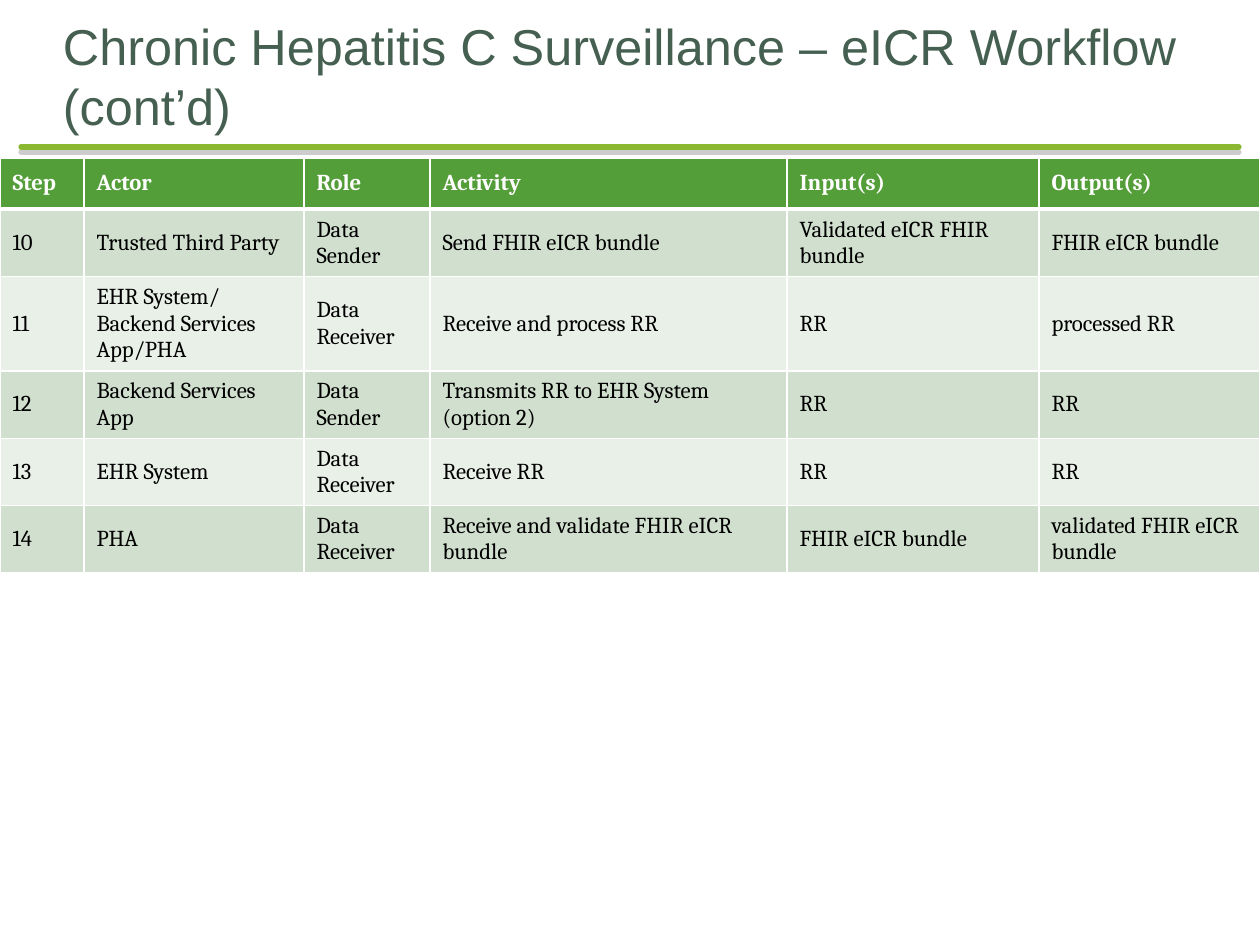
from dataclasses import dataclass

from lxml import etree
from pptx import Presentation
from pptx.dml.color import RGBColor
from pptx.enum.shapes import MSO_CONNECTOR
from pptx.enum.text import MSO_ANCHOR
from pptx.oxml import parse_xml
from pptx.oxml.ns import nsdecls, qn
from pptx.util import Pt

STRAIGHT = MSO_CONNECTOR.STRAIGHT
MIDDLE = MSO_ANCHOR.MIDDLE
BOTTOM = MSO_ANCHOR.BOTTOM


@dataclass(frozen=True)
class Theme:
    title: str = "455F51"
    rule: str = "8AB833"
    shadow: str = "808080"
    header: str = "549E39"
    bands: tuple = ("D1DFCE", "E9F0E8")
    white: str = "FFFFFF"
    ink: str = "000000"
    title_font: str = "Arial"
    table_font: str = "Cambria"
    title_size: float = 28.8
    table_size: float = 13


THEME = Theme()
SCALE = 914400 / 126


def px(length):
    return round(length * SCALE)


def write(frame, text, *, font, size, color, bold=False):
    frame.word_wrap = True
    run = frame.paragraphs[0].add_run()
    run.text = text
    run.font.name = font
    run.font.size = Pt(size)
    run.font.bold = bold
    run.font.color.rgb = RGBColor.from_string(color)


prs = Presentation()
prs.slide_width = px(1260)
prs.slide_height = px(945)
slide = prs.slides.add_slide(prs.slide_layouts[6])

rule = slide.shapes.add_connector(STRAIGHT, px(21), px(147), px(1239), px(147))
rule.line.color.rgb = RGBColor.from_string(THEME.rule)
rule.line.width = Pt(3)
rule.line._get_or_add_ln().set("cap", "rnd")
rule._element.spPr.append(parse_xml(
    f'<a:effectLst {nsdecls("a")}>'
    f'<a:outerShdw dist="{Pt(3)}" dir="5400000" algn="ctr" rotWithShape="0">'
    f'<a:srgbClr val="{THEME.shadow}"><a:alpha val="40000"/></a:srgbClr>'
    '</a:outerShdw></a:effectLst>'
))

heading = slide.shapes.add_textbox(px(63), px(63), px(1134), px(73)).text_frame
heading.margin_left = heading.margin_right = heading.margin_bottom = 0
heading.margin_top = px(6)
heading.vertical_anchor = BOTTOM
write(heading, "Chronic Hepatitis C Surveillance – eICR Workflow (cont’d)",
      font=THEME.title_font, size=THEME.title_size, color=THEME.title)

steps = [
    ("Step", "Actor", "Role", "Activity", "Input(s)", "Output(s)"),
    ("10", "Trusted Third Party", "Data Sender", "Send FHIR eICR bundle",
     "Validated eICR FHIR bundle", "FHIR eICR bundle"),
    ("11", "EHR System/ Backend Services App/PHA", "Data Receiver",
     "Receive and process RR", "RR", "processed RR"),
    ("12", "Backend Services App", "Data Sender",
     "Transmits RR to EHR System (option 2)", "RR", "RR"),
    ("13", "EHR System", "Data Receiver", "Receive RR", "RR", "RR"),
    ("14", "PHA", "Data Receiver", "Receive and validate FHIR eICR bundle",
     "FHIR eICR bundle", "validated FHIR eICR bundle"),
]
column_widths = [84, 220, 126, 357, 252, 221]
row_heights = [51, 65, 91, 65, 65, 65]

workflow = slide.shapes.add_table(
    len(steps), len(column_widths), 0, px(158),
    px(sum(column_widths)), px(sum(row_heights))).table
for column, width in zip(workflow.columns, column_widths):
    column.width = px(width)
for row, height in zip(workflow.rows, row_heights):
    row.height = px(height)

for r, step in enumerate(steps):
    is_header = r == 0
    fill = THEME.header if is_header else THEME.bands[(r - 1) % 2]
    borders = {"lnL": 1, "lnR": 1, "lnT": 3 if r == 1 else 1, "lnB": 3 if is_header else 1}
    for c, text in enumerate(step):
        cell = workflow.cell(r, c)
        cell.vertical_anchor = MIDDLE
        for side, width in borders.items():
            border = etree.SubElement(cell._tc.get_or_add_tcPr(), qn(f"a:{side}"), w=str(Pt(width)))
            paint = etree.SubElement(border, qn("a:solidFill"))
            etree.SubElement(paint, qn("a:srgbClr"), val=THEME.white)
        cell.fill.solid()
        cell.fill.fore_color.rgb = RGBColor.from_string(fill)
        write(cell.text_frame, text, font=THEME.table_font, size=THEME.table_size,
              color=THEME.white if is_header else THEME.ink, bold=is_header)

prs.save("out.pptx")
